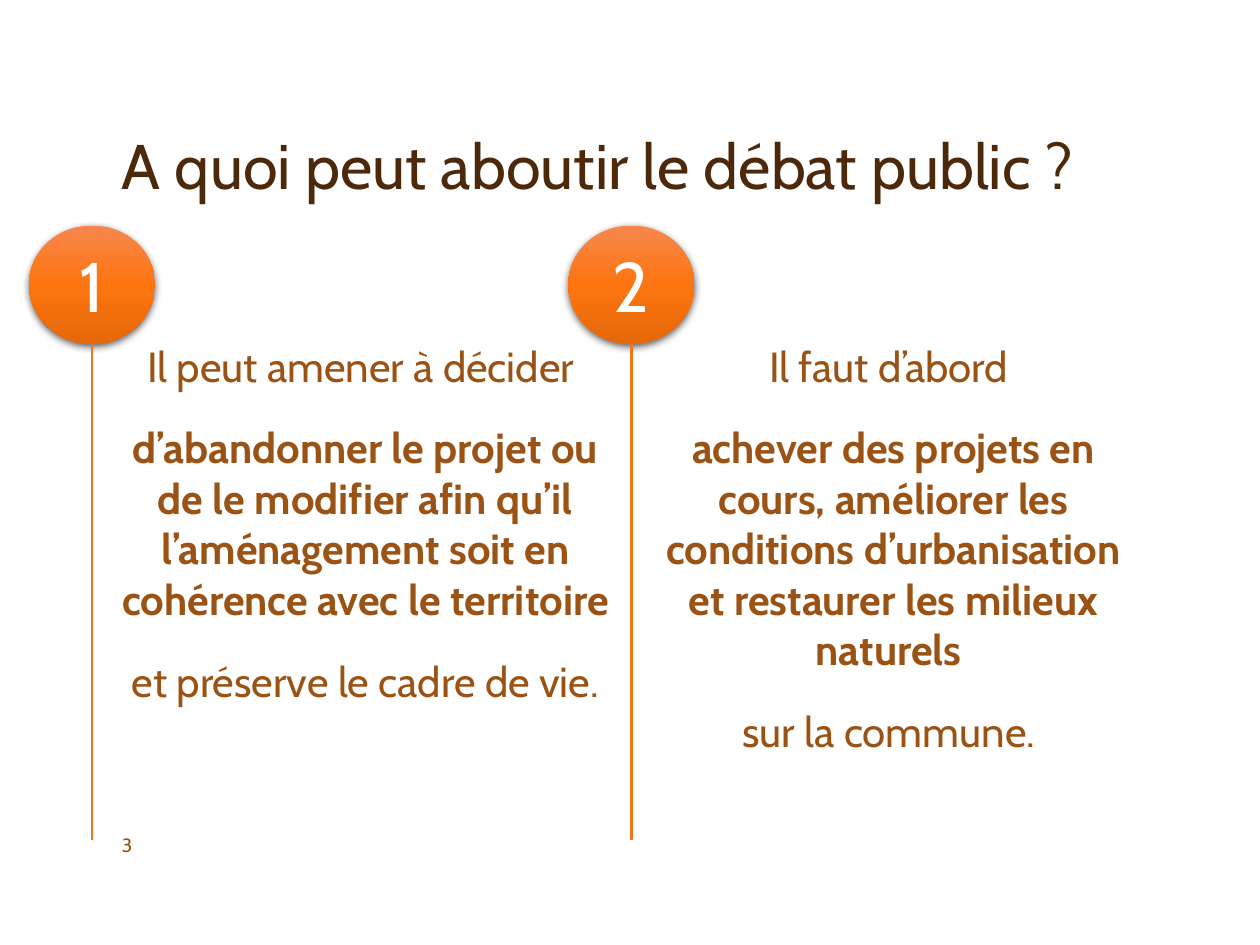
from dataclasses import dataclass

from lxml import etree
from pptx import Presentation
from pptx.dml.color import RGBColor
from pptx.enum import shapes, text
from pptx.oxml import ns
from pptx.util import Pt


@dataclass(frozen=True)
class Theme:
    font: str = "Cabin"
    title: str = "4D290B"
    body: str = "9A5315"
    line: str = "F3771A"
    badge_text: str = "FFFFFF"
    badge_stops: tuple = ((0, "F7874E"), (50, "FE750F"), (100, "E5680A"))
    title_size: int = 36
    body_size: int = 24
    badge_size: int = 40
    number_size: int = 11


@dataclass(frozen=True)
class Box:
    left: float
    top: float
    width: float
    height: float

    def lengths(self):
        return Pt(self.left), Pt(self.top), Pt(self.width), Pt(self.height)


THEME = Theme()
COLUMNS = (
    ("1", ("Il peut amener à décider ",
           "d’abandonner le projet ou de le modifier afin qu’il l’aménagement "
           "soit en cohérence avec le territoire",
           "et préserve le cadre de vie.")),
    ("2", ("Il faut d’abord ",
           "achever des projets en cours, améliorer les conditions "
           "d’urbanisation et restaurer les milieux naturels ",
           "sur la commune. ")),
)


def add_child(parent, tag, **attributes):
    return etree.SubElement(parent, ns.qn(tag), attributes)


def style(para, size, color, bold=False):
    para.font.name = THEME.font
    para.font.size = Pt(size)
    para.font.bold = bold
    para.font.color.rgb = RGBColor.from_string(color)


def add_text(page, box, lines, size, color, anchor, side_inset=7.2):
    frame = page.shapes.add_textbox(*box.lengths()).text_frame
    frame.word_wrap = True
    frame.vertical_anchor = anchor
    frame.margin_left = frame.margin_right = Pt(side_inset)
    frame.text = "\n".join(lines)
    for para in frame.paragraphs:
        style(para, size, color)
    return frame


def add_title(page, box):
    frame = add_text(page, box, ["A quoi peut aboutir le débat public ?"],
                     THEME.title_size, THEME.title, text.MSO_ANCHOR.BOTTOM)
    frame.paragraphs[0].line_spacing = 0.9


def shade_badge(badge):
    """Give the badge its three-stop vertical gradient and soft shadow."""
    badge.fill.gradient()
    badge.fill.gradient_angle = 270
    stops = badge.element.spPr.find(".//" + ns.qn("a:gsLst"))
    stops.clear()
    for position, color in THEME.badge_stops:
        stop = add_child(stops, "a:gs", pos=str(position * 1000))
        add_child(stop, "a:srgbClr", val=color)
    badge.line.fill.background()
    badge.shadow.inherit = False
    effects = badge.element.spPr.find(ns.qn("a:effectLst"))
    shadow = add_child(effects, "a:outerShdw", blurRad=str(Pt(4.5)),
                       dist=str(Pt(1.5)), dir="5400000", rotWithShape="0")
    shade = add_child(shadow, "a:srgbClr", val="000000")
    add_child(shade, "a:alpha", val="63000")


def add_marker(page, box, number):
    """Place a numbered badge with a line from it to the bottom of the box."""
    badge_box = Box(box.left, box.top, box.width, 67.7)
    badge = page.shapes.add_shape(shapes.MSO_SHAPE.OVAL, *badge_box.lengths())
    shade_badge(badge)
    frame = badge.text_frame
    frame.text = number
    frame.vertical_anchor = text.MSO_ANCHOR.MIDDLE
    frame.paragraphs[0].alignment = text.PP_ALIGN.CENTER
    style(frame.paragraphs[0], THEME.badge_size, THEME.badge_text)

    middle = Pt(box.left + box.width / 2)
    stem = page.shapes.add_connector(
        shapes.MSO_CONNECTOR.STRAIGHT,
        middle, Pt(box.top + badge_box.height), middle, Pt(box.top + box.height))
    stem.line.color.rgb = RGBColor.from_string(THEME.line)
    stem.line.width = Pt(1.5)
    add_child(stem.element.spPr, "a:effectLst")


def add_argument(page, box, lines):
    """Place centred paragraphs, the middle one in bold."""
    frame = add_text(page, box, lines, THEME.body_size, THEME.body,
                     text.MSO_ANCHOR.TOP, side_inset=6)
    for para in frame.paragraphs:
        para.alignment = text.PP_ALIGN.CENTER
    for para in frame.paragraphs[1:]:
        para.space_before = Pt(18)
    frame.paragraphs[1].font.bold = True


def add_page_number(page, box):
    add_text(page, box, ["3"], THEME.number_size, THEME.body,
             text.MSO_ANCHOR.MIDDLE)


def main():
    deck = Presentation()
    deck.slide_width, deck.slide_height = Pt(720), Pt(540)
    page = deck.slides.add_slide(deck.slide_layouts[6])
    margin = 62.6
    add_title(page, Box(margin, 23.8, 594, 95.8))
    for index, (number, lines) in enumerate(COLUMNS):
        add_argument(page, Box(margin + index * 301.7, 190.8, 292.4, 283), lines)
        add_marker(page, Box(16.6 + index * 308.2, 128.9, 72, 351.3), number)
    add_page_number(page, Box(margin, 473.8, 44.6, 18))
    deck.save("out.pptx")


if __name__ == "__main__":
    main()
